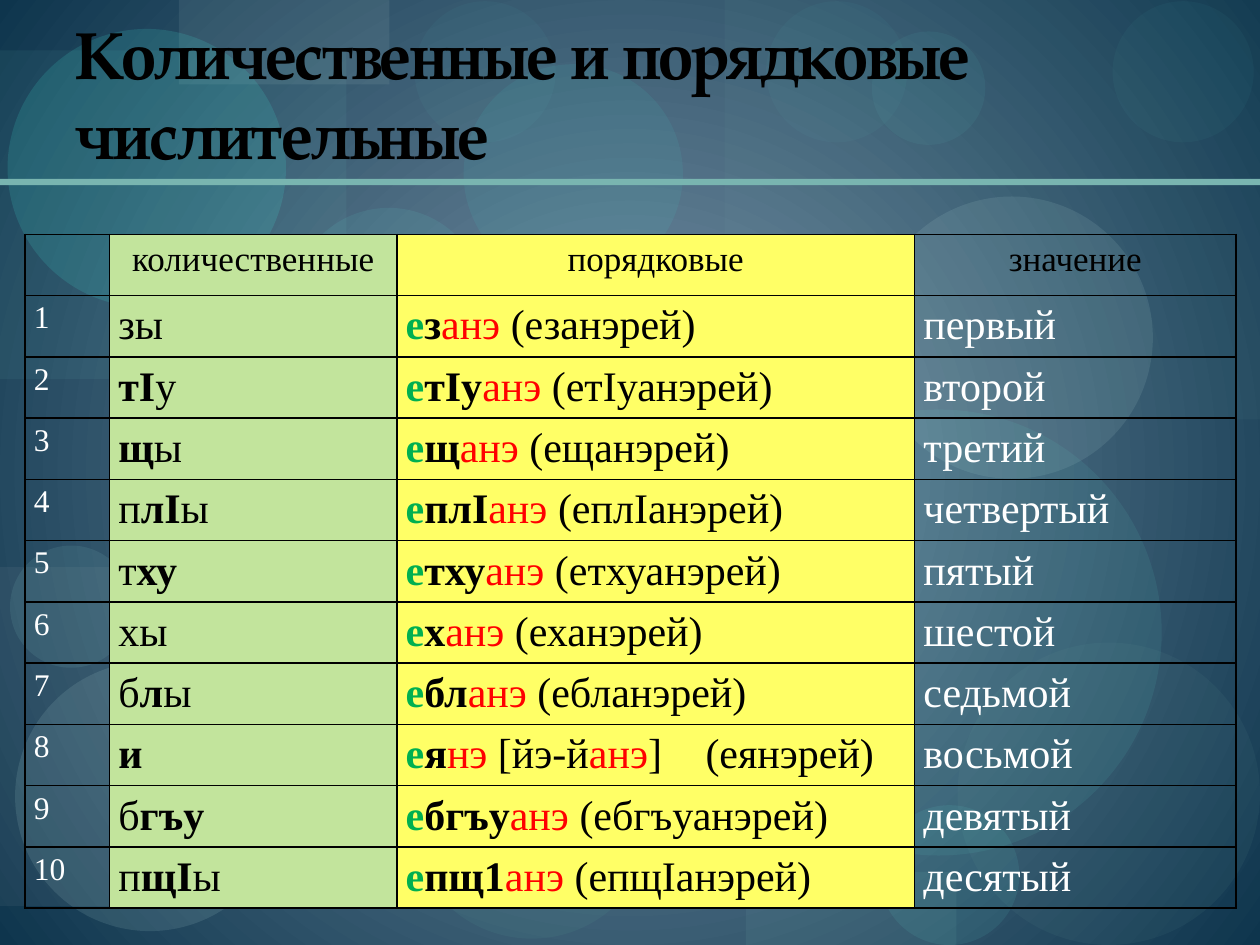
import pptx
import pptx.util
from lxml import etree
from pptx.dml.color import RGBColor
from pptx.enum.shapes import MSO_SHAPE
from pptx.enum.text import MSO_ANCHOR, PP_ALIGN
from pptx.oxml.ns import qn
from pptx.util import Inches, Pt

BLACK = RGBColor(0x00, 0x00, 0x00)
WHITE = RGBColor(0xFF, 0xFF, 0xFF)
RED = RGBColor(0xFF, 0x00, 0x00)
GREEN = RGBColor(0x00, 0xB0, 0x50)
LIME = RGBColor(0xC2, 0xE4, 0x9C)
YELLOW = RGBColor(0xFF, 0xFF, 0x66)
BG_CENTER = RGBColor(0x7B, 0x96, 0xAA)
BG_EDGE = RGBColor(0x0E, 0x35, 0x4D)
TEAL = RGBColor(0x79, 0xB5, 0xB0)
DEEP_TEAL = RGBColor(0x54, 0x97, 0x91)
DUSTY_TEAL = RGBColor(0x70, 0xA3, 0x9E)
GRAY = RGBColor(0xB2, 0xB7, 0xBA)
AQUA = RGBColor(0x65, 0xE8, 0xDC)
BRIGHT_AQUA = RGBColor(0x44, 0xEA, 0xDC)
PALE_AQUA = RGBColor(0xC1, 0xE8, 0xE4)
SOFT_AQUA = RGBColor(0x97, 0xDC, 0xD6)
MID_AQUA = RGBColor(0x61, 0xCD, 0xC4)
SEA = RGBColor(0x77, 0xD6, 0xCE)
MIST = RGBColor(0xBE, 0xD7, 0xD4)

TITLE = "Количественные и порядковые числительные"
HEADINGS = ["", "количественные", "порядковые", "значение"]

# Cardinal with its *stressed* part, root of the ordinal, meaning
NUMERALS = [
    ("зы", "з", "первый"),
    ("*тI*у", "тIу", "второй"),
    ("*щ*ы", "щ", "третий"),
    ("п*лI*ы", "плI", "четвертый"),
    ("т*ху*", "тху", "пятый"),
    ("хы", "х", "шестой"),
    ("б*л*ы", "бл", "седьмой"),
    ("*и*", "я", "восьмой"),
    ("б*гъу*", "бгъу", "девятый"),
    ("п*щI*ы", "пщ1", "десятый"),
]
PREFIX, SUFFIX, FULL_ENDING = "е", "анэ", "рей"
# Ordinals whose root ends in a vowel have their own ending
IRREGULAR_ENDINGS = {
    "я": [("нэ ", RED), ("[йэ-й", BLACK), (SUFFIX, RED), ("]\t(еянэрей)", BLACK)],
}

COLUMN_WIDTHS = [0.67, 2.28, 4.11, 2.55]
COLUMN_FILLS = [None, LIME, YELLOW, None]
TABLE_LEFT, TABLE_TOP, TABLE_HEIGHT = 0.2, 1.86, 5.35
FULL_FORM_TAB = 2.38
HEADING_SIZE, NUMBER_SIZE, WORD_SIZE = 20, 18, 24

# (colour, opacity in percent): left, top, width, height
PANELS = {
    (TEAL, 9): [(1, 2.51, 3, 2.33)],
    (TEAL, 6): [(5.75, 0, 4.25, 3.33)],
    (GRAY, 8): [(0, 4.5, 2.58, 2.69)],
    (SEA, 7): [(0, 0.4, 2.75, 2.61)],
    (MIST, 10): [(1.42, 0, 1.67, 0.67)],
    (TEAL, 10): [(5.92, 6.92, 1.67, 0.58)],
}
TOP_BUBBLE_LEFTS = [3.29, 6.08, 8.83]
# (colour, opacity in percent): left, top, diameter, or width and height
BUBBLES = {
    (DEEP_TEAL, 13): [(3.26, 5.55, 1.92, 1.9)],
    (DUSTY_TEAL, 8): [(4.57, 2.61, 2.38), (7.6, 5.1, 2.4)],
    (PALE_AQUA, 11): [(6.91, 1.56, 2.24)],
    (PALE_AQUA, 12): [(0.12, 5.25, 2.14)],
    (AQUA, 9): [(6.98, 6.39, 1.11), (2.21, 5.01, 1.12), (2.32, 1.65, 1.53)],
    (BRIGHT_AQUA, 15): [(0.06, 0.23, 2.21)],
    (BRIGHT_AQUA, 8): [(4.56, 5.06, 1.66, 1.53), (3.68, 0.51, 1.74)],
    (SOFT_AQUA, 10): [(0.08, 4.33, 0.97), (1.75, 4.05, 1.31)],
    (MID_AQUA, 10): [(5.68, 3.25, 3.54)],
    (AQUA, 6): [(6.92, 0.25, 0.9)],
    (AQUA, 4): [(left, 0.01, 1.12) for left in TOP_BUBBLE_LEFTS],
}
TITLE_RULE = {(TEAL, 100): [(0, 1.42, 10, 0.05)]}


def paint_background(slide):
    """Radial gradient from the centre of the slide."""
    fill = slide.background.fill
    fill.gradient()
    for stop, color in zip(fill.gradient_stops, (BG_CENTER, BG_EDGE)):
        stop.color.rgb = color
    gradient = slide.element.find(".//" + qn("a:gradFill"))
    gradient.remove(gradient.find(qn("a:lin")))
    circle = etree.SubElement(gradient, qn("a:path"), path="circle")
    etree.SubElement(circle, qn("a:fillToRect"), l="50000", t="50000", r="50000", b="50000")


def add_tinted(slide, preset, tinted_places):
    """Add one preset shape at every place, in the tint it is listed under."""
    for (color, opacity), places in tinted_places.items():
        for left, top, *size in places:
            shape = slide.shapes.add_shape(
                preset, Inches(left), Inches(top), Inches(size[0]), Inches(size[-1]))
            shape.shadow.inherit = False
            shape.line.fill.background()
            shape.fill.solid()
            shape.fill.fore_color.rgb = color
            tint = shape.element.spPr.find(".//" + qn("a:srgbClr"))
            etree.SubElement(tint, qn("a:alpha"), val=str(opacity * 1000))


def format_title(title):
    title.left, title.top = Inches(0.5), Inches(0.17)
    title.width, title.height = Inches(9), Inches(1.25)
    title.text_frame.text = TITLE
    title.text_frame.vertical_anchor = MSO_ANCHOR.BOTTOM
    paragraph = title.text_frame.paragraphs[0]
    paragraph.alignment = PP_ALIGN.LEFT
    font = paragraph.font
    font.name, font.size, font.bold = "TeX Gyre Pagella", Pt(38), True
    font.color.rgb = BLACK
    paragraph.runs[0].font.bold = True
    title.element.find(".//" + qn("a:rPr")).set("spc", "-100")
    title.element.getparent().append(title.element)  # above the backdrop


def cardinal_runs(cardinal):
    """Every second piece between asterisks is bold."""
    return [(piece, BLACK, index % 2 == 1)
            for index, piece in enumerate(cardinal.split("*")) if piece]


def ordinal_runs(root):
    """Prefix, root and suffix, then the full form in brackets."""
    full_form = PREFIX + root.replace("1", "I") + SUFFIX + FULL_ENDING
    regular_ending = [(SUFFIX + " ", RED), (f"({full_form})", BLACK)]
    ending = IRREGULAR_ENDINGS.get(root, regular_ending)
    return [(PREFIX, GREEN, True), (root, BLACK, True)] + [
        (text, color, False) for text, color in ending]


def add_border(cell):
    properties = cell._tc.get_or_add_tcPr()
    for side in ("lnL", "lnR", "lnT", "lnB"):
        border = etree.SubElement(properties, qn("a:" + side), w=str(Pt(1)))
        solid = etree.SubElement(border, qn("a:solidFill"))
        etree.SubElement(solid, qn("a:srgbClr"), val=str(BLACK))


def add_tab_stop(paragraph, position):
    tabs = etree.Element(qn("a:tabLst"))
    etree.SubElement(tabs, qn("a:tab"), pos=str(Inches(position)), algn="l")
    paragraph._p.pPr.find(qn("a:defRPr")).addprevious(tabs)


def fill_cell(cell, runs, size, alignment, fill):
    """Write runs of (text, colour, bold) into a bordered cell."""
    add_border(cell)  # borders must come before the fill in the XML
    if fill is None:
        cell.fill.background()
    else:
        cell.fill.solid()
        cell.fill.fore_color.rgb = fill
    cell.margin_left = cell.margin_right = Inches(0.07)
    cell.margin_top = cell.margin_bottom = 0
    paragraph = cell.text_frame.paragraphs[0]
    paragraph.alignment = alignment
    paragraph.line_spacing = 1.15
    paragraph.font.name, paragraph.font.size = "Times New Roman", Pt(size)
    for text, color, bold in runs:
        run = paragraph.add_run()
        run.text = text
        run.font.color.rgb, run.font.bold = color, bold
        if "\t" in text:
            add_tab_stop(paragraph, FULL_FORM_TAB)


def add_numerals(slide):
    row_count = len(NUMERALS) + 1
    table = slide.shapes.add_table(
        row_count, len(COLUMN_WIDTHS), Inches(TABLE_LEFT), Inches(TABLE_TOP),
        Inches(sum(COLUMN_WIDTHS)), Inches(TABLE_HEIGHT)).table
    table.first_row = table.horz_banding = False
    for column, width in zip(table.columns, COLUMN_WIDTHS):
        column.width = Inches(width)
    for row in table.rows:
        row.height = Inches(TABLE_HEIGHT / row_count)

    for column, heading in enumerate(HEADINGS):
        runs = [(heading, BLACK, False)] if heading else []
        fill_cell(table.cell(0, column), runs, HEADING_SIZE,
                  PP_ALIGN.CENTER, COLUMN_FILLS[column])
    for number, (cardinal, root, meaning) in enumerate(NUMERALS, start=1):
        row = [[(str(number), WHITE, False)], cardinal_runs(cardinal),
               ordinal_runs(root), [(meaning, WHITE, False)]]
        for column, runs in enumerate(row):
            size = NUMBER_SIZE if column == 0 else WORD_SIZE
            fill_cell(table.cell(number, column), runs, size,
                      PP_ALIGN.JUSTIFY, COLUMN_FILLS[column])


def main():
    deck = pptx.Presentation()
    deck.slide_width, deck.slide_height = Inches(10), Inches(7.5)
    slide = deck.slides.add_slide(deck.slide_layouts[5])
    paint_background(slide)
    add_tinted(slide, MSO_SHAPE.RECTANGLE, PANELS)
    add_tinted(slide, MSO_SHAPE.OVAL, BUBBLES)
    add_tinted(slide, MSO_SHAPE.RECTANGLE, TITLE_RULE)
    format_title(slide.shapes.title)
    add_numerals(slide)
    deck.save("out.pptx")


if __name__ == "__main__":
    main()
